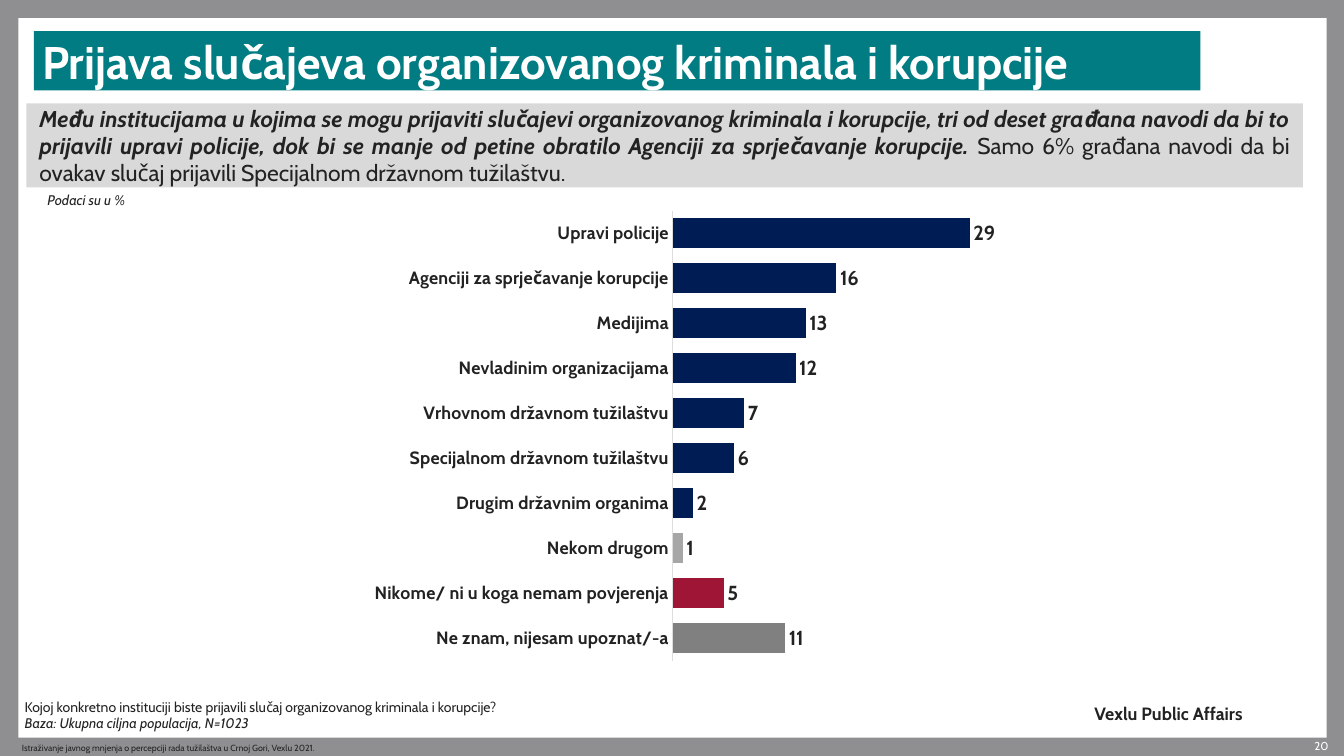
import pptx
import pptx.chart.data
import pptx.dml.color
import pptx.enum.chart
import pptx.enum.shapes
import pptx.enum.text
import pptx.oxml
import pptx.oxml.ns
import pptx.util

Inches = pptx.util.Inches
Pt = pptx.util.Pt
ALIGN = pptx.enum.text.PP_ALIGN
ANCHOR = pptx.enum.text.MSO_ANCHOR
FONT = "Cabin"
INK = "222223"
WHITE = "FFFFFF"
ANSWERS = {
    "Upravi policije": 29,
    "Agenciji za sprječavanje korupcije": 16,
    "Medijima": 13,
    "Nevladinim organizacijama": 12,
    "Vrhovnom državnom tužilaštvu": 7,
    "Specijalnom državnom tužilaštvu": 6,
    "Drugim državnim organima": 2,
    "Nekom drugom": 1,
    "Nikome/ ni u koga nemam povjerenja": 5,
    "Ne znam, nijesam upoznat/-a": 11,
}
BAR_COLOR = "001C54"
POINT_COLORS = {7: "A6A6A6", 8: "9F1535", 9: "808080"}
PLOT = {"x": 0.584, "y": 0.007, "w": 0.416, "h": 0.958}


def rgb(color):
    """Turn a hex string into a colour."""
    return pptx.dml.color.RGBColor.from_string(color)


def paint(fill, color):
    """Give a fill one solid colour."""
    fill.solid()
    fill.fore_color.rgb = rgb(color)


def style(font, size, color=INK, bold=False, italic=False):
    """Format a font."""
    font.name = FONT
    font.size = Pt(size)
    font.color.rgb = rgb(color)
    font.bold = bold
    font.italic = italic


def write(s, paragraphs, size, color=INK, align=ALIGN.LEFT,
          anchor=ANCHOR.TOP, inset=(0, 0)):
    """Fill a shape with paragraphs, each a list of (text, bold, italic)."""
    tf = s.text_frame
    tf.word_wrap = True
    tf.vertical_anchor = anchor
    tf.margin_left = tf.margin_right = Inches(inset[0])
    tf.margin_top = tf.margin_bottom = Inches(inset[1])
    for i, runs in enumerate(paragraphs):
        p = tf.add_paragraph() if i else tf.paragraphs[0]
        p.alignment = align
        for text, bold, italic in runs:
            r = p.add_run()
            r.text = text
            style(r.font, size, color, bold, italic)


def add_panel(slide, box, color):
    """Add a plain filled rectangle."""
    s = slide.shapes.add_shape(
        pptx.enum.shapes.MSO_SHAPE.RECTANGLE, *map(Inches, box))
    s.shadow.inherit = False
    paint(s.fill, color)
    s.line.fill.background()
    return s


def add_text(slide, box, paragraphs, size, **options):
    """Add a text box."""
    write(slide.shapes.add_textbox(*map(Inches, box)), paragraphs, size, **options)


def place_plot(chart):
    """Fix the inner plot area within the chart."""
    area = chart._chartSpace.chart.plotArea
    for old in area.findall(pptx.oxml.ns.qn("c:layout")):
        area.remove(old)
    modes = '<c:xMode val="edge"/><c:yMode val="edge"/>'
    sizes = "".join(f'<c:{k} val="{v}"/>' for k, v in PLOT.items())
    area.insert(0, pptx.oxml.parse_xml(
        f'<c:layout {pptx.oxml.ns.nsdecls("c")}><c:manualLayout>'
        f'<c:layoutTarget val="inner"/>{modes}{sizes}'
        '</c:manualLayout></c:layout>'))


def add_answers_chart(slide, box):
    """Add the bar chart of institutions."""
    data = pptx.chart.data.CategoryChartData()
    data.categories = list(ANSWERS)
    data.add_series("Series 1", list(ANSWERS.values()))
    chart = slide.shapes.add_chart(
        pptx.enum.chart.XL_CHART_TYPE.BAR_CLUSTERED,
        *map(Inches, box), data).chart
    style(chart.font, 16, bold=True)
    chart.has_legend = False
    chart.has_title = False
    place_plot(chart)

    names = chart.category_axis
    names.reverse_order = True
    names.major_tick_mark = pptx.enum.chart.XL_TICK_MARK.NONE
    names.format.line.color.rgb = rgb("DDDDDE")
    names.format.line.width = Pt(0.75)
    style(names.tick_labels.font, 14, bold=True)
    values = chart.value_axis
    values.visible = False
    values.has_major_gridlines = False
    values.minimum_scale = 0
    values.maximum_scale = 35

    plot = chart.plots[0]
    plot.gap_width = 50
    plot.vary_by_categories = False
    series = plot.series[0]
    series.invert_if_negative = False
    paint(series.format.fill, BAR_COLOR)
    for i, color in POINT_COLORS.items():
        paint(series.points[i].format.fill, color)
    labels = series.data_labels
    labels.show_value = True
    labels.position = pptx.enum.chart.XL_LABEL_POSITION.OUTSIDE_END
    labels.number_format = "#,##0;\\-#,##0"
    labels.number_format_is_linked = False
    style(labels.font, 16, bold=True)


def main():
    """Build the slide and save it."""
    prs = pptx.Presentation()
    prs.slide_width = Inches(14.7)
    prs.slide_height = Inches(8.27)
    slide = prs.slides.add_slide(prs.slide_layouts[6])
    paint(slide.background.fill, "8F8F92")
    add_panel(slide, (0.2, 0.2, 14.31, 7.87), WHITE)

    add_text(slide, (14.06, 8.09, 0.47, 0.17), [[("20", False, False)]], 9,
             color=WHITE, align=ALIGN.RIGHT)
    add_text(slide, (11.97, 7.69, 2.09, 0.24),
             [[("Vexlu Public Affairs", True, False)]], 14)
    add_text(slide, (0.24, 8.09, 4.86, 0.18),
             [[("Istraživanje javnog mnjenja o percepciji rada tužilaštva "
                "u Crnoj Gori, Vexlu 2021.", False, False)]], 7,
             anchor=ANCHOR.MIDDLE)
    add_text(slide, (0.42, 2.05, 1.34, 0.29),
             [[("Podaci su u %", False, True)]], 11, inset=(0.1, 0.05))

    title = add_panel(slide, (0.37, 0.34, 12.76, 0.65), "007C82")
    write(title, [[("Prijava slučajeva organizovanog kriminala i korupcije",
                    True, False)]], 36, color=WHITE,
          anchor=ANCHOR.MIDDLE, inset=(0.09, 0.02))
    summary = add_panel(slide, (0.29, 1.13, 13.96, 0.92), "D9D9D9")
    write(summary, [[
        ("Među institucijama u kojima se mogu prijaviti slučajevi "
         "organizovanog kriminala i korupcije, tri od deset građana navodi "
         "da bi to prijavili upravi policije, dok bi se manje od petine "
         "obratilo Agenciji za sprječavanje korupcije. ", True, True),
        ("Samo 6% građana navodi da bi ovakav slučaj prijavili "
         "Specijalnom državnom tužilaštvu.", False, False),
    ]], 18, align=ALIGN.JUSTIFY, anchor=ANCHOR.MIDDLE, inset=(0.14, 0))
    add_text(slide, (0.27, 7.63, 6.58, 0.38), [
        [("Kojoj konkretno instituciji biste prijavili slučaj "
          "organizovanog kriminala i korupcije?", False, False)],
        [("Baza: Ukupna ciljna populacija, N=1023", False, True)],
    ], 11, anchor=ANCHOR.MIDDLE)
    add_answers_chart(slide, (1.85, 2.27, 9.43, 5.14))
    prs.save("out.pptx")


if __name__ == "__main__":
    main()
